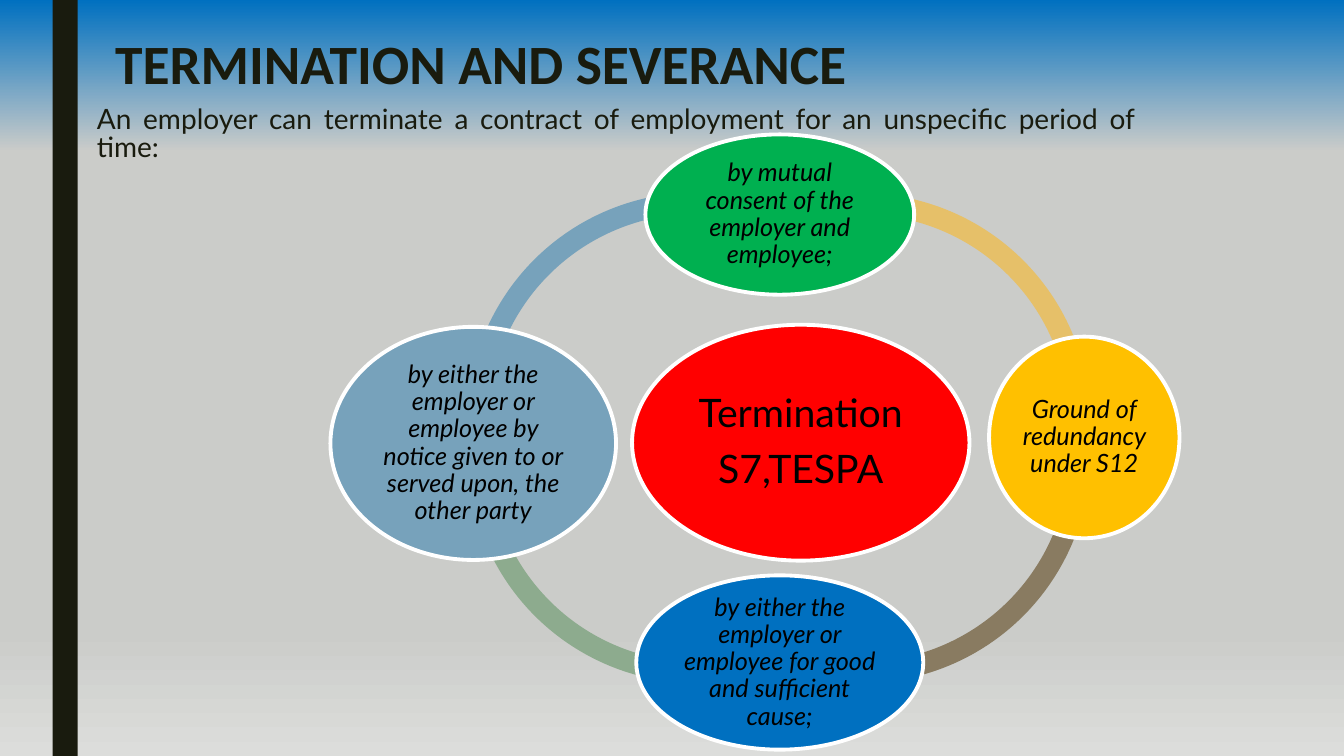
from lxml.etree import SubElement
from pptx import Presentation
from pptx.dml.color import RGBColor
from pptx.enum.shapes import MSO_SHAPE
from pptx.enum.text import MSO_ANCHOR, MSO_AUTO_SIZE, PP_ALIGN
from pptx.oxml.ns import qn
from pptx.util import Pt

COLOURS = {
    "ink": "191B0E", "black": "000000", "white": "FFFFFF",
    "blue": "0070C0", "grey": "CBCCC9", "light": "DCDDDB",
    "red": "FF0000", "green": "00B050", "amber": "FFC000",
    "steel": "77A2BB", "sage": "8DAB8E", "umber": "897B61", "sand": "E6C069",
}
BACKGROUND_STOPS = [(0, "blue"), (20, "grey"), (83, "grey"), (100, "light")]

# Left and top within the cycle, start and end angle in degrees, colour
ARCS = [
    (97.5, 41.5, 174.73, 291.69, "steel"),
    (98, 64, 68.5, 182.78, "sage"),
    (215, 64, 355.84, 111.17, "umber"),
    (215, 42, 248.88, 3.56, "sand"),
]
ARC_SIZE = 328
ARC_THICKNESS = 0.046

# Left, top, width and height within the cycle, colour, text
CENTRE = (215.5, 136, 241, 168.5, "red", "Termination\nS7,TESPA")
REASONS = [
    (225, 0, 192, 114.5, "green",
     "by mutual consent of the employer and employee;"),
    (470.5, 144.5, 136, 144, "amber", "Ground of redundancy under S12"),
    (218.5, 315, 205, 124.5, "blue",
     "by either the employer or employee for good and sufficient cause;"),
    (0, 137.5, 204, 166.5, "steel",
     "by either the employer or employee by notice given to or served upon, "
     "the other party"),
]


def colour(name):
    return RGBColor.from_string(COLOURS[name])


def place(shape, left, top, width, height):
    shape.left, shape.top = Pt(left), Pt(top)
    shape.width, shape.height = Pt(width), Pt(height)


def style_text(paragraph, font_name, size, ink, bold=False, italic=False):
    for run in paragraph.runs:
        font = run.font
        font.name, font.size = font_name, Pt(size)
        font.bold, font.italic = bold, italic
        font.color.rgb = colour(ink)


def add_filled_shape(slide, preset, left, top, width, height, fill):
    shape = slide.shapes.add_shape(
        preset, Pt(left), Pt(top), Pt(width), Pt(height))
    shape.shadow.inherit = False
    shape.fill.solid()
    shape.fill.fore_color.rgb = colour(fill)
    shape.line.fill.background()
    return shape


def paint_background(slide):
    fill = slide.background.fill
    fill.gradient()
    fill.gradient_angle = 270
    stop_list = next(slide.background._cSld.iter(qn("a:gsLst")))
    for stop in list(stop_list):
        stop_list.remove(stop)
    for percent, name in BACKGROUND_STOPS:
        stop = SubElement(stop_list, qn("a:gs"), pos=str(percent * 1000))
        SubElement(stop, qn("a:srgbClr"), val=COLOURS[name])


def fill_title(slide, left, top, width, height):
    title = slide.shapes.title
    place(title, left, top, width, height)
    text_frame = title.text_frame
    text_frame.text = "TERMINATION AND SEVERANCE"
    text_frame.auto_size = MSO_AUTO_SIZE.NONE
    text_frame.vertical_anchor = MSO_ANCHOR.MIDDLE
    paragraph = text_frame.paragraphs[0]
    paragraph.alignment = PP_ALIGN.LEFT
    paragraph.line_spacing = 0.89
    style_text(paragraph, "Calibri", 39.6, "ink", bold=True)


def fill_introduction(slide, left, top, width, height):
    body = slide.placeholders[1]
    place(body, left, top, width, height)
    text_frame = body.text_frame
    text_frame.text = ("An employer can terminate a contract of employment "
                       "for an unspecific period of time:")
    text_frame.auto_size = MSO_AUTO_SIZE.NONE
    text_frame.vertical_anchor = MSO_ANCHOR.TOP
    paragraph = text_frame.paragraphs[0]
    paragraph.alignment = PP_ALIGN.JUSTIFY
    paragraph.line_spacing = 0.84
    paragraph.space_before, paragraph.space_after = Pt(10), Pt(2)
    properties = paragraph._p.get_or_add_pPr()
    properties.set("marL", "0")
    properties.set("indent", "0")
    SubElement(properties, qn("a:buNone"))
    style_text(paragraph, "Lato", 20, "ink")


def add_bubble(slide, left, top, width, height, fill, text, size, inset, italic):
    bubble = add_filled_shape(
        slide, MSO_SHAPE.OVAL, left, top, width, height, fill)
    bubble.line.color.rgb = colour("white")
    bubble.line.width = Pt(2.75)
    text_frame = bubble.text_frame
    text_frame.text = text
    text_frame.word_wrap = True
    text_frame.vertical_anchor = MSO_ANCHOR.MIDDLE
    text_frame.margin_left = text_frame.margin_right = Pt(inset)
    text_frame.margin_top = text_frame.margin_bottom = Pt(inset)
    for paragraph in text_frame.paragraphs:
        paragraph.alignment = PP_ALIGN.CENTER
        paragraph.line_spacing = 0.9
        paragraph.space_after = Pt(0.35 * size)
        style_text(paragraph, "Lato", size, "black", italic=italic)


def add_cycle(slide, left, top):
    """Ring of four arcs with a bubble on each side and one in the centre."""
    for x, y, start, end, fill in ARCS:
        arc = add_filled_shape(slide, MSO_SHAPE.BLOCK_ARC, left + x, top + y,
                               ARC_SIZE, ARC_SIZE, fill)
        # Angles are stored in 60000ths of a degree, adjustments in 100000ths
        arc.adjustments[0] = start * 0.6
        arc.adjustments[1] = end * 0.6
        arc.adjustments[2] = ARC_THICKNESS
    x, y, *details = CENTRE
    add_bubble(slide, left + x, top + y, *details, size=28, inset=2.8, italic=False)
    for x, y, *details in REASONS:
        add_bubble(slide, left + x, top + y, *details, size=18, inset=2, italic=True)


def main():
    presentation = Presentation()
    presentation.slide_width, presentation.slide_height = Pt(960), Pt(540)
    slide = presentation.slides.add_slide(presentation.slide_layouts[1])
    paint_background(slide)
    add_filled_shape(slide, MSO_SHAPE.RECTANGLE, 37.5, 0, 18, 540, "ink")
    fill_title(slide, 75, 23, 756, 50)
    fill_introduction(slide, 62, 72.5, 756, 29.5)
    add_cycle(slide, 236, 96)
    presentation.save("out.pptx")


if __name__ == "__main__":
    main()
